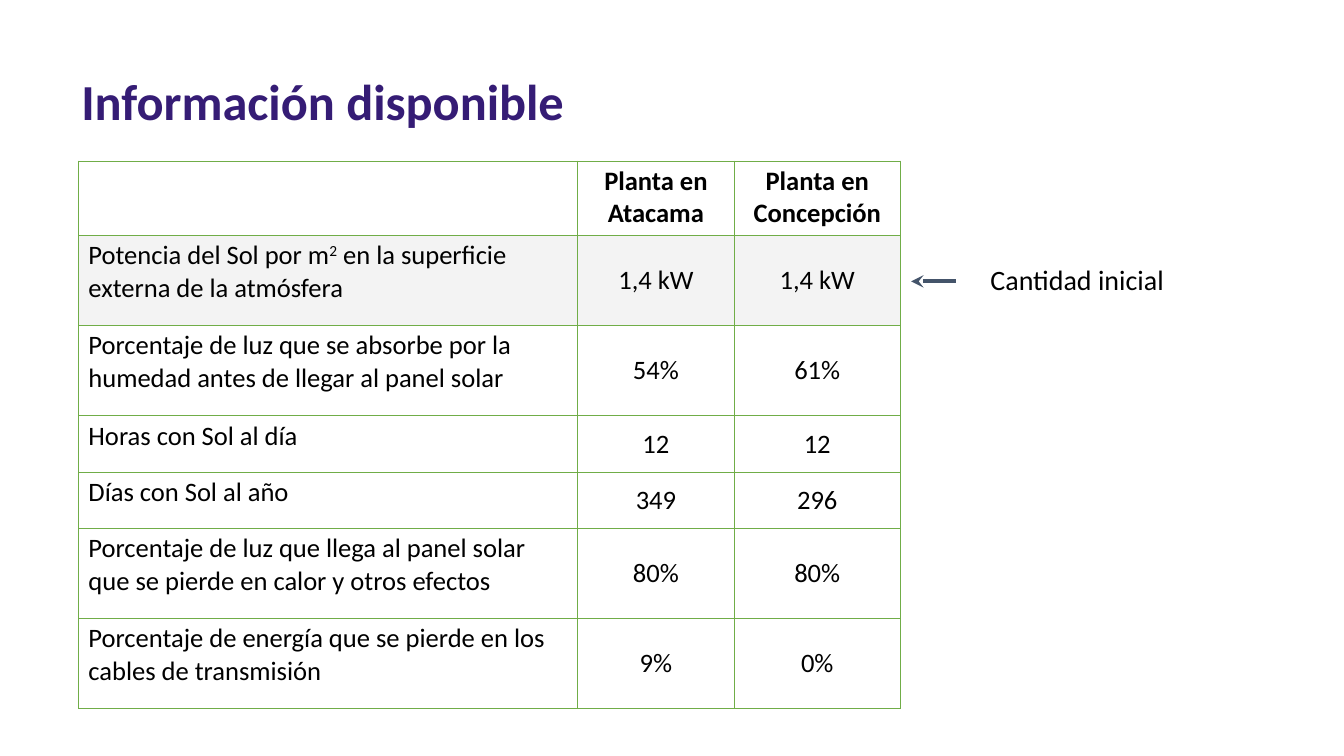
from lxml import etree
from pptx import Presentation
from pptx.dml.color import RGBColor
from pptx.enum.shapes import MSO_CONNECTOR
from pptx.enum.text import MSO_ANCHOR, PP_ALIGN
from pptx.oxml.ns import qn
from pptx.util import Cm, Pt

STRAIGHT = MSO_CONNECTOR.STRAIGHT
TOP, MIDDLE = MSO_ANCHOR.TOP, MSO_ANCHOR.MIDDLE
LEFT, CENTER = PP_ALIGN.LEFT, PP_ALIGN.CENTER

THEME = {
    "font": "Calibri",
    "title": "351C75", "text": "000000", "border": "70AD47",
    "highlight": "F3F3F3", "arrow": "44546A",
    "title_size": 36, "table_size": 19, "note_size": 20,
}

ROWS = [
    (1.88, "", "Planta en Atacama", "Planta en Concepción"),
    (2.27, "Potencia del Sol por m^2^ en la superficie externa de la atmósfera", "1,4 kW", "1,4 kW"),
    (2.27, "Porcentaje de luz que se absorbe por la humedad antes de llegar al panel solar", "54%", "61%"),
    (1.42, "Horas con Sol al día", "12", "12"),
    (1.42, "Días con Sol al año", "349", "296"),
    (2.27, "Porcentaje de luz que llega al panel solar que se pierde en calor y otros efectos", "80%", "80%"),
    (2.27, "Porcentaje de energía que se pierde en los cables de transmisión", "9%", "0%"),
]
COLUMN_WIDTHS = [12.57, 3.96, 4.17]


def format_run(r, size, color, bold=False):
    r.font.name = THEME["font"]
    r.font.size = Pt(size)
    r.font.bold = bold
    r.font.color.rgb = RGBColor.from_string(color)


def add_border(tc_pr, side):
    ln = etree.SubElement(tc_pr, qn(f"a:{side}"), w=str(Pt(0.75)))
    fill = etree.SubElement(ln, qn("a:solidFill"))
    etree.SubElement(fill, qn("a:srgbClr"), val=THEME["border"])


prs = Presentation()
prs.slide_width, prs.slide_height = Cm(33.87), Cm(19.05)
s = prs.slides.add_slide(prs.slide_layouts[6])

for text, box, size, color, bold in [
    ("Información disponible", (1.8, 1.65, 21.82, 1.8), THEME["title_size"], THEME["title"], True),
    ("Cantidad inicial", (24.71, 6.48, 8, 1.12), THEME["note_size"], THEME["text"], False),
]:
    tf = s.shapes.add_textbox(*map(Cm, box)).text_frame
    tf.word_wrap = True
    tf.text = text
    format_run(tf.paragraphs[0].runs[0], size, color, bold)

table = s.shapes.add_table(
    len(ROWS), len(COLUMN_WIDTHS), Cm(1.98), Cm(4.06),
    Cm(sum(COLUMN_WIDTHS)), Cm(sum(row[0] for row in ROWS))).table
table.first_row = False
table.horz_banding = False
for column, width in zip(table.columns, COLUMN_WIDTHS):
    column.width = Cm(width)

for i, (height, *texts) in enumerate(ROWS):
    table.rows[i].height = Cm(height)
    for j, text in enumerate(texts):
        cell = table.cell(i, j)
        cell.margin_left = cell.margin_right = Cm(0.25)
        cell.margin_top = cell.margin_bottom = Cm(0.1)
        cell.vertical_anchor = MIDDLE if i and j else TOP
        for side in ("lnL", "lnR", "lnT", "lnB"):
            add_border(cell._tc.get_or_add_tcPr(), side)
        if i == 1:
            cell.fill.solid()
            cell.fill.fore_color.rgb = RGBColor.from_string(THEME["highlight"])
        else:
            cell.fill.background()
        p = cell.text_frame.paragraphs[0]
        p.alignment = CENTER if j else LEFT
        if not text:
            continue
        for k, part in enumerate(text.split("^")):
            r = p.add_run()
            r.text = part
            format_run(r, THEME["table_size"], THEME["text"], i == 0)
            if k % 2:
                r._r.get_or_add_rPr().set("baseline", "30000")

arrow = s.shapes.add_connector(STRAIGHT, Cm(24.08), Cm(7.09), Cm(22.96), Cm(7.09))
arrow.line.width = Pt(3)
arrow.line.color.rgb = RGBColor.from_string(THEME["arrow"])
etree.SubElement(arrow.line._get_or_add_ln(), qn("a:tailEnd"), type="stealth")
etree.SubElement(arrow._element.spPr, qn("a:effectLst"))

prs.save("out.pptx")
